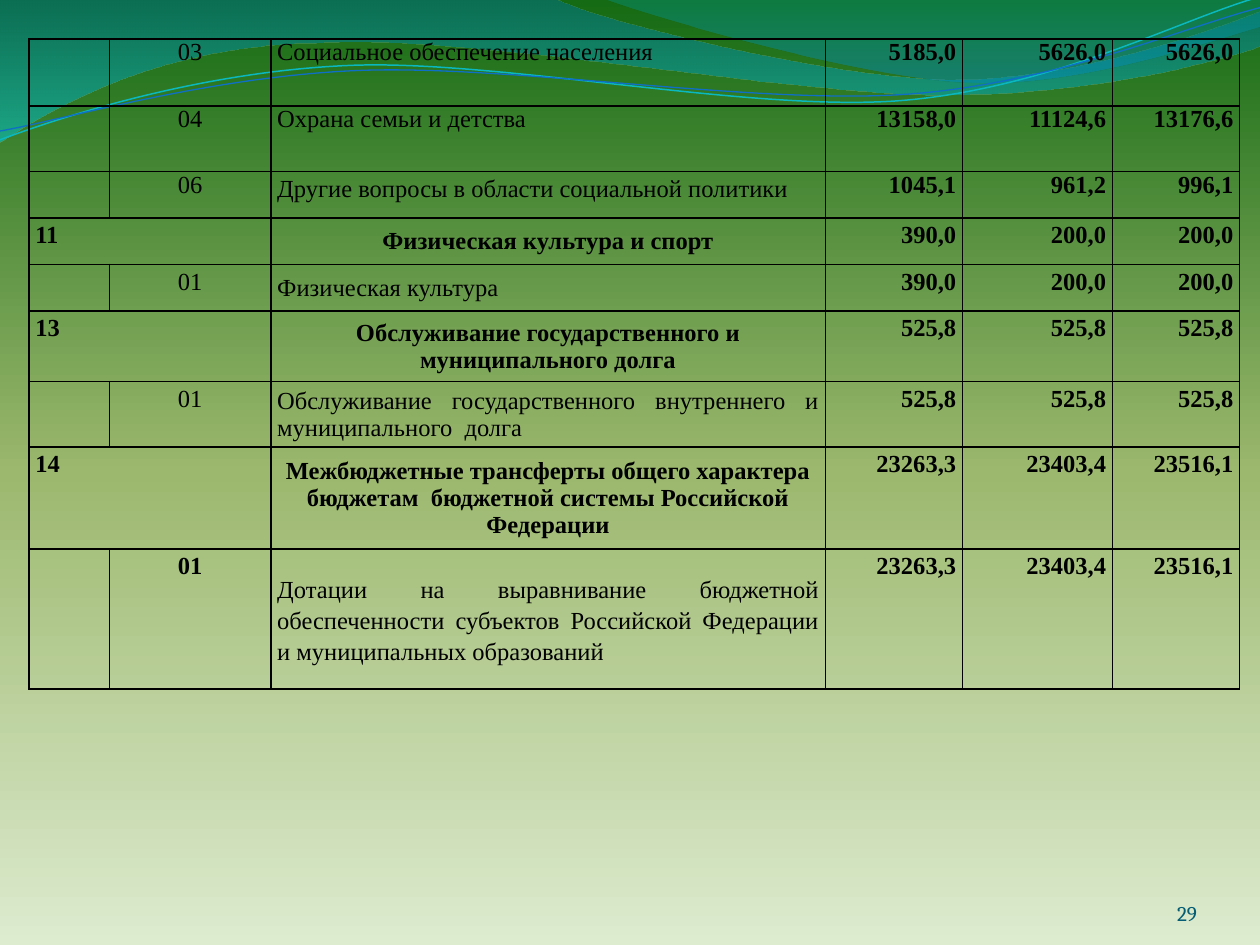
from dataclasses import dataclass
from math import cos, radians, sin

from lxml import etree
from pptx import Presentation
from pptx.dml.color import RGBColor
from pptx.enum import text
from pptx.oxml.ns import qn
from pptx.util import Inches, Pt

LEFT, CENTER, RIGHT, JUSTIFY = (text.PP_ALIGN.LEFT, text.PP_ALIGN.CENTER,
                                text.PP_ALIGN.RIGHT, text.PP_ALIGN.JUSTIFY)
TOP, MIDDLE, BOTTOM = (text.MSO_ANCHOR.TOP, text.MSO_ANCHOR.MIDDLE,
                       text.MSO_ANCHOR.BOTTOM)


@dataclass(frozen=True)
class Theme:
    body_font: str = "Times New Roman"
    number_font: str = "Cambria"
    body_size: float = 14
    number_size: float = 12
    ink: str = "000000"
    number_color: str = "045D75"
    border_width: float = 1
    # gradient stops: position %, colour, opacity %
    backdrop: tuple = ((0, "DDEBCF", 100), (50, "9CB86E", 100), (100, "156B13", 100))
    left_swoosh: tuple = ((0, "0074A1", 45), (100, "00C6CF", 55))
    right_swoosh: tuple = ((0, "00A1A9", 30), (80, "008BBF", 45))
    upper_wave: str = "0AB8BF"
    lower_wave: str = "0F6FC6"


def write(frame, words, *, font, size, color, bold=False, align=LEFT,
          spacing=None, after=None):
    paragraph = frame.paragraphs[0]
    paragraph.alignment = align
    paragraph.line_spacing = spacing
    if after is not None:
        paragraph.space_after = Pt(after)
    run = paragraph.add_run()
    run.text = words
    run.font.name, run.font.size, run.font.bold = font, Pt(size), bold
    run.font.color.rgb = RGBColor.from_string(color)


def apply_gradient(owner, fill, stops, angle):
    """Fill with any number of stops; the angle is counter-clockwise."""
    fill.gradient()
    fill.gradient_angle = angle
    stop_list = owner.element.find(".//" + qn("a:gsLst"))
    for old in list(stop_list):
        stop_list.remove(old)
    for position, color, opacity in stops:
        stop = etree.SubElement(stop_list, qn("a:gs"), pos=str(position * 1000))
        rgb = etree.SubElement(stop, qn("a:srgbClr"), val=color)
        if opacity < 100:
            etree.SubElement(rgb, qn("a:alpha"), val=str(opacity * 1000))


def pairs(segment):
    return list(zip(segment[::2], segment[1::2]))


class SlideBuilder:
    def __init__(self, slide, theme):
        self.slide, self.theme = slide, theme

    def background(self):
        apply_gradient(self.slide, self.slide.background.fill, self.theme.backdrop, 90)

    def outline(self, box, segments, close, rotation=0):
        """Segments are points (2 numbers) or cubic curves (6), as seen on the slide."""
        left, top, width, height = box
        middle_x, middle_y = left + width / 2, top + height / 2
        turn = radians(-rotation)

        def local(x, y):
            dx, dy = x - middle_x, y - middle_y
            return (Inches(width / 2 + dx * cos(turn) - dy * sin(turn)),
                    Inches(height / 2 + dx * sin(turn) + dy * cos(turn)))

        nodes = [[local(*point) for point in pairs(segment)] for segment in segments]
        builder = self.slide.shapes.build_freeform(*nodes[0][-1])
        builder.add_line_segments([node[-1] for node in nodes[1:]], close=close)
        shape = builder.convert_to_shape()
        shape.left, shape.top, shape.width, shape.height = map(Inches, box)
        shape.rotation = rotation
        shape.shadow.inherit = False
        self.bend(shape, nodes)
        return shape

    def bend(self, shape, nodes):
        """Turn the straight steps that have control points into cubic curves."""
        track = shape.element.find(".//" + qn("a:pathLst"))[0]
        track.set("w", str(shape.width))
        track.set("h", str(shape.height))
        for step, points in zip(list(track), nodes):
            if len(points) == 3:
                step_curve = etree.Element(qn("a:cubicBezTo"))
                track.replace(step, step_curve)
                step = step_curve
            for old in list(step):
                step.remove(old)
            for x, y in points:
                etree.SubElement(step, qn("a:pt"), x=str(x), y=str(y))

    def swoosh(self, box, segments, stops):
        shape = self.outline(box, segments, close=True)
        apply_gradient(shape, shape.fill, stops, 270)
        shape.line.fill.background()

    def wave(self, box, segments, color, width):
        shape = self.outline(box, segments, close=False, rotation=357.3)
        shape.fill.background()
        shape.line.color.rgb = RGBColor.from_string(color)
        shape.line.width = Pt(width)

    def page_number(self, words, *box):
        frame = self.slide.shapes.add_textbox(*map(Inches, box)).text_frame
        frame.word_wrap = True
        frame.vertical_anchor = BOTTOM
        frame.margin_left = frame.margin_right = frame.margin_top = frame.margin_bottom = 0
        write(frame, words, font=self.theme.number_font, size=self.theme.number_size,
              color=self.theme.number_color, align=RIGHT)

    def table(self, left, top, columns, heights):
        table = self.slide.shapes.add_table(
            len(heights), len(columns), Inches(left), Inches(top),
            Inches(sum(columns)), Inches(sum(heights))).table
        table.first_row = table.horz_banding = False
        for column, width in zip(table.columns, columns):
            column.width = Inches(width)
        for row, height in zip(table.rows, heights):
            row.height = Inches(height)
            for cell in row.cells:
                self.plain_cell(cell)
        return table

    def plain_cell(self, cell):
        cell.margin_left = cell.margin_right = Inches(0.05)
        cell.margin_top = cell.margin_bottom = 0
        cell.fill.background()
        properties = cell._tc.get_or_add_tcPr()
        for index, side in enumerate(("lnL", "lnR", "lnT", "lnB")):
            border = etree.Element(qn("a:" + side), w=str(Pt(self.theme.border_width)))
            fill = etree.SubElement(border, qn("a:solidFill"))
            etree.SubElement(fill, qn("a:srgbClr"), val=self.theme.ink)
            properties.insert(index, border)

    def cell_text(self, cell, words, anchor=TOP, loose=False, **layout):
        cell.vertical_anchor = anchor
        if loose:
            layout.update(spacing=1.15, after=10)
        write(cell.text_frame, words, font=self.theme.body_font,
              size=self.theme.body_size, color=self.theme.ink, **layout)


# section, subsection, name, three yearly amounts
BUDGET = [
    ("", "03", "Социальное обеспечение населения", "5185,0", "5626,0", "5626,0"),
    ("", "04", "Охрана семьи и детства", "13158,0", "11124,6", "13176,6"),
    ("", "06", "Другие вопросы в области социальной политики", "1045,1", "961,2", "996,1"),
    ("11", "", "Физическая культура и спорт", "390,0", "200,0", "200,0"),
    ("", "01", "Физическая культура", "390,0", "200,0", "200,0"),
    ("13", "", "Обслуживание государственного и муниципального долга",
     "525,8", "525,8", "525,8"),
    ("", "01", "Обслуживание государственного внутреннего и муниципального  долга",
     "525,8", "525,8", "525,8"),
    ("14", "", "Межбюджетные трансферты общего характера бюджетам  бюджетной системы "
     "Российской Федерации", "23263,3", "23403,4", "23516,1"),
    ("", "01", "Дотации на выравнивание бюджетной обеспеченности субъектов Российской "
     "Федерации и муниципальных образований", "23263,3", "23403,4", "23516,1"),
]
COLUMNS = [0.64, 1.28, 4.4, 1.09, 1.19, 1.01]
HEIGHTS = [0.53, 0.52, 0.37, 0.37, 0.37, 0.56, 0.52, 0.81, 1.11]
SOCIAL_ROWS = 3  # the rows that continue the social policy section
LOOSE_NAMES = (2, 8)


def add_budget(page):
    table = page.table(0.23, 0.31, COLUMNS, HEIGHTS)
    last = len(BUDGET) - 1
    for r, (section, subsection, name, *amounts) in enumerate(BUDGET):
        loose = r >= SOCIAL_ROWS
        if section:
            table.cell(r, 0).merge(table.cell(r, 1))
            page.cell_text(table.cell(r, 0), section, loose=loose, bold=True)
        else:
            page.cell_text(table.cell(r, 1), subsection, loose=loose,
                           bold=r == last, align=CENTER)
        page.cell_text(table.cell(r, 2), name, anchor=MIDDLE if loose else TOP,
                       loose=r in LOOSE_NAMES, bold=bool(section),
                       align=CENTER if section else JUSTIFY)
        for c, amount in enumerate(amounts, start=3):
            page.cell_text(table.cell(r, c), amount, loose=loose, bold=True, align=RIGHT)


def main():
    deck = Presentation()
    deck.slide_width, deck.slide_height = Inches(10), Inches(7.5)
    theme = Theme()
    page = SlideBuilder(deck.slides.add_slide(deck.slide_layouts[6]), theme)
    page.background()
    page.swoosh((-0.01, -0.01, 10.02, 1.14), [
        (0, -0.01), (4.4, -0.01), (4.76, 0.17, 6.64, 0.63, 7.58, 0.63),
        (8.53, 0.63, 9.58, 0.26, 10, 0.09), (10.01, 0.36),
        (9.83, 0.44, 8.7, 0.76, 7.46, 0.75), (6.22, 0.75, 3.82, 0.28, 2.57, 0.34),
        (1.29, 0.35, 0.46, 0.83, -0.01, 1.13), (0, -0.01)], theme.left_swoosh)
    page.swoosh((4.79, -0.01, 5.21, 0.7), [
        (4.79, -0.01), (5.09, 0.11, 6.82, 0.62, 7.69, 0.65),
        (8.56, 0.69, 9.61, 0.32, 10, 0.21), (10, 0), (4.79, -0.01)], theme.right_swoosh)
    page.wave((-0.02, 0.22, 10.02, 0.71), [
        (0, 1.11), (0.48, 0.93, 1.58, 0.57, 2.77, 0.52),
        (3.95, 0.47, 5.93, 0.89, 7.13, 0.8),
        (8.33, 0.71, 9.38, 0.15, 9.98, -0.02)], theme.upper_wave, 0.85)
    page.wave((-0.02, 0.3, 10.03, 0.58), [
        (0, 1.04), (0.47, 0.96, 1.64, 0.61, 2.83, 0.56),
        (4.03, 0.51, 5.97, 0.83, 7.17, 0.75),
        (8.36, 0.67, 9.41, 0.21, 10, 0.06)], theme.lower_wave, 0.75)
    page.page_number("29", 8.67, 6.95, 0.83, 0.4)
    add_budget(page)
    deck.save("out.pptx")


if __name__ == "__main__":
    main()
